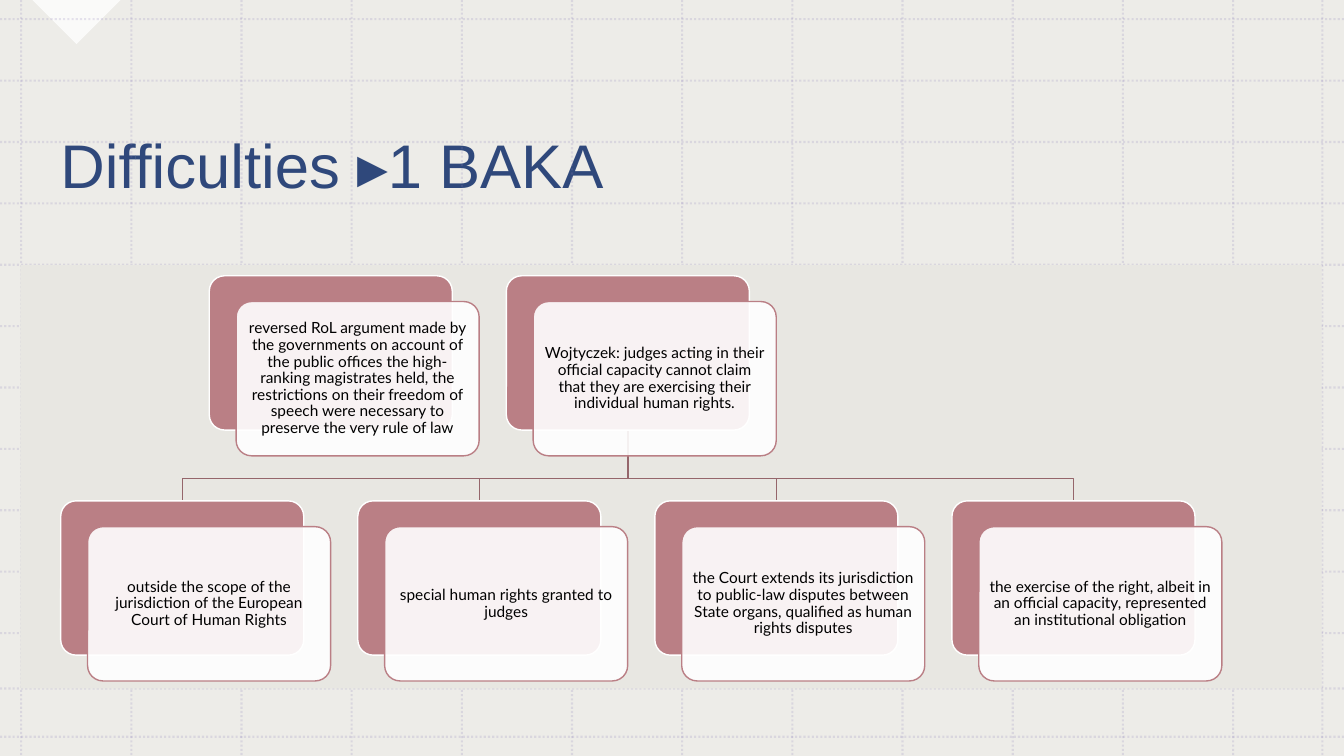
from dataclasses import dataclass

from lxml.etree import SubElement
from pptx import Presentation
from pptx.dml.color import RGBColor
from pptx.enum.dml import MSO_LINE
from pptx.enum.shapes import MSO_CONNECTOR, MSO_SHAPE
from pptx.enum.text import MSO_ANCHOR, PP_ALIGN
from pptx.oxml.ns import qn
from pptx.util import Pt


@dataclass(frozen=True)
class Theme:
    backdrop: RGBColor = RGBColor.from_string("EDECE8")
    panel: RGBColor = RGBColor.from_string("E8E7E2")
    grid: RGBColor = RGBColor.from_string("8D7FBA")
    heading: RGBColor = RGBColor.from_string("002060")
    rose: RGBColor = RGBColor.from_string("BA7F85")
    branch: RGBColor = RGBColor.from_string("95666B")
    white: RGBColor = RGBColor.from_string("FFFFFF")
    ink: RGBColor = RGBColor.from_string("000000")
    heading_font: str = "Arial"
    body_font: str = "Lato"
    heading_size: Pt = Pt(44)
    body_size: Pt = Pt(11)


def set_opacity(item, percent):
    color = next(item.element.iter(qn("a:srgbClr")))
    SubElement(color, qn("a:alpha")).set("val", str(percent * 1000))


def add_block(kind, left, top, width, height, fill, line=None):
    block = slide.shapes.add_shape(kind, Pt(left), Pt(top), Pt(width), Pt(height))
    block.shadow.inherit = False
    block.fill.solid()
    block.fill.fore_color.rgb = fill
    if line is None:
        block.line.fill.background()
    else:
        block.line.color.rgb = line
        block.line.width = Pt(1)
    return block


theme = Theme()
WIDTH, HEIGHT = 960, 540

deck = Presentation()
deck.slide_width, deck.slide_height = Pt(WIDTH), Pt(HEIGHT)
slide = deck.slides.add_slide(deck.slide_layouts[5])
slide.background.fill.solid()
slide.background.fill.fore_color.rgb = theme.backdrop

corner = add_block(MSO_SHAPE.RIGHT_TRIANGLE, 32.4, -22.3, 44.6, 44.6, theme.white)
corner.rotation = 315
set_opacity(corner, 75)

columns = [15.1 + 78.7 * i for i in range(12)] + [944.6]
rows = [13.7 + 43.85 * i for i in range(11)] + [491.8, 526.3]
grid = [(x, 0, x, HEIGHT) for x in columns] + [(0, y, WIDTH, y) for y in rows]
for ends in grid:
    rule = slide.shapes.add_connector(MSO_CONNECTOR.STRAIGHT, *map(Pt, ends))
    rule.line.color.rgb = theme.grid
    rule.line.width = Pt(1.5)
    rule.line.dash_style = MSO_LINE.ROUND_DOT
    set_opacity(rule, 20)
    SubElement(rule.element.spPr, qn("a:effectLst"))

title = slide.shapes.title
title.left, title.top, title.width, title.height = Pt(36), Pt(56.9), Pt(846), Pt(126.7)
title.text_frame.vertical_anchor = MSO_ANCHOR.MIDDLE
heading = title.text_frame.paragraphs[0]
heading.alignment = PP_ALIGN.LEFT
heading.line_spacing = 0.9
heading_run = heading.add_run()
heading_run.text = "Difficulties ▸1 BAKA"
heading_run.font.name = theme.heading_font
heading_run.font.size = theme.heading_size
heading_run.font.color.rgb = theme.heading
set_opacity(title, 80)

add_block(MSO_SHAPE.RECTANGLE, 14.6, 189.4, 929.5, 302.4, theme.panel)

CARD_W, CARD_H = 173.6, 110.2
FIRST_LEFT, PITCH = 43.4, 212.2
ARGUMENT_TOP, CONSEQUENCE_TOP = 197, 357.8
SHIFT_X, SHIFT_Y = 19.2, 18.4
arguments = [
    "reversed RoL argument made by the governments on account of the public offices the "
    "high-ranking magistrates held, the restrictions on their freedom of speech were "
    "necessary to preserve the very rule of law",
    "Wojtyczek: judges acting in their official capacity cannot claim that they are "
    "exercising their individual human rights.",
]
consequences = [
    "outside the scope of the jurisdiction of the European Court of Human Rights",
    "special human rights granted to judges",
    "the Court extends its jurisdiction to public-law disputes between State organs, "
    "qualified as human rights disputes",
    "the exercise of the right, albeit in an official capacity, represented an "
    "institutional obligation",
]
cards = [(i + 0.5, ARGUMENT_TOP, words) for i, words in enumerate(arguments)]
cards += [(i, CONSEQUENCE_TOP, words) for i, words in enumerate(consequences)]

stem_x = FIRST_LEFT + 1.5 * PITCH + CARD_W / 2
stem_top = ARGUMENT_TOP + CARD_H
for i in reversed(range(len(consequences))):
    end_x = FIRST_LEFT + i * PITCH + CARD_W / 2
    outline = slide.shapes.build_freeform(Pt(stem_x), Pt(stem_top))
    bends = [(stem_x, 342), (end_x, 342), (end_x, CONSEQUENCE_TOP)]
    outline.add_line_segments([(Pt(x), Pt(y)) for x, y in bends], close=False)
    branch = outline.convert_to_shape()
    branch.shadow.inherit = False
    branch.fill.background()
    branch.line.color.rgb = theme.branch
    branch.line.width = Pt(1)

for column, top, words in cards:
    left = FIRST_LEFT + column * PITCH
    back = add_block(MSO_SHAPE.ROUNDED_RECTANGLE, left, top, CARD_W, CARD_H,
                     theme.rose, theme.white)
    front = add_block(MSO_SHAPE.ROUNDED_RECTANGLE, left + SHIFT_X, top + SHIFT_Y,
                      CARD_W, CARD_H, theme.white, theme.rose)
    back.adjustments[0] = front.adjustments[0] = 0.1
    set_opacity(front, 90)
    frame = front.text_frame
    frame.word_wrap = True
    frame.vertical_anchor = MSO_ANCHOR.MIDDLE
    frame.margin_left = frame.margin_right = Pt(3.6)
    frame.margin_top = frame.margin_bottom = Pt(3.6)
    statement = frame.paragraphs[0]
    statement.alignment = PP_ALIGN.CENTER
    statement.line_spacing = 0.9
    statement_run = statement.add_run()
    statement_run.text = words
    statement_run.font.name = theme.body_font
    statement_run.font.size = theme.body_size
    statement_run.font.color.rgb = theme.ink

deck.save("out.pptx")
